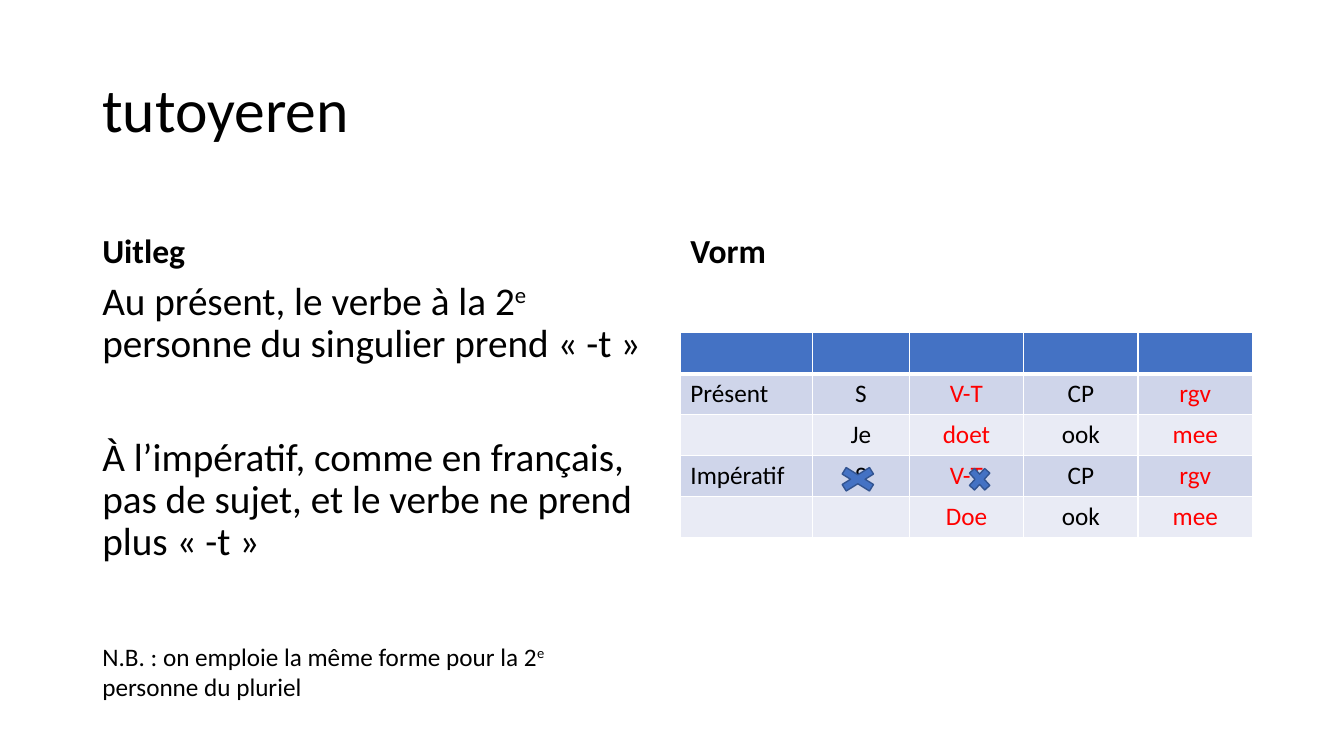
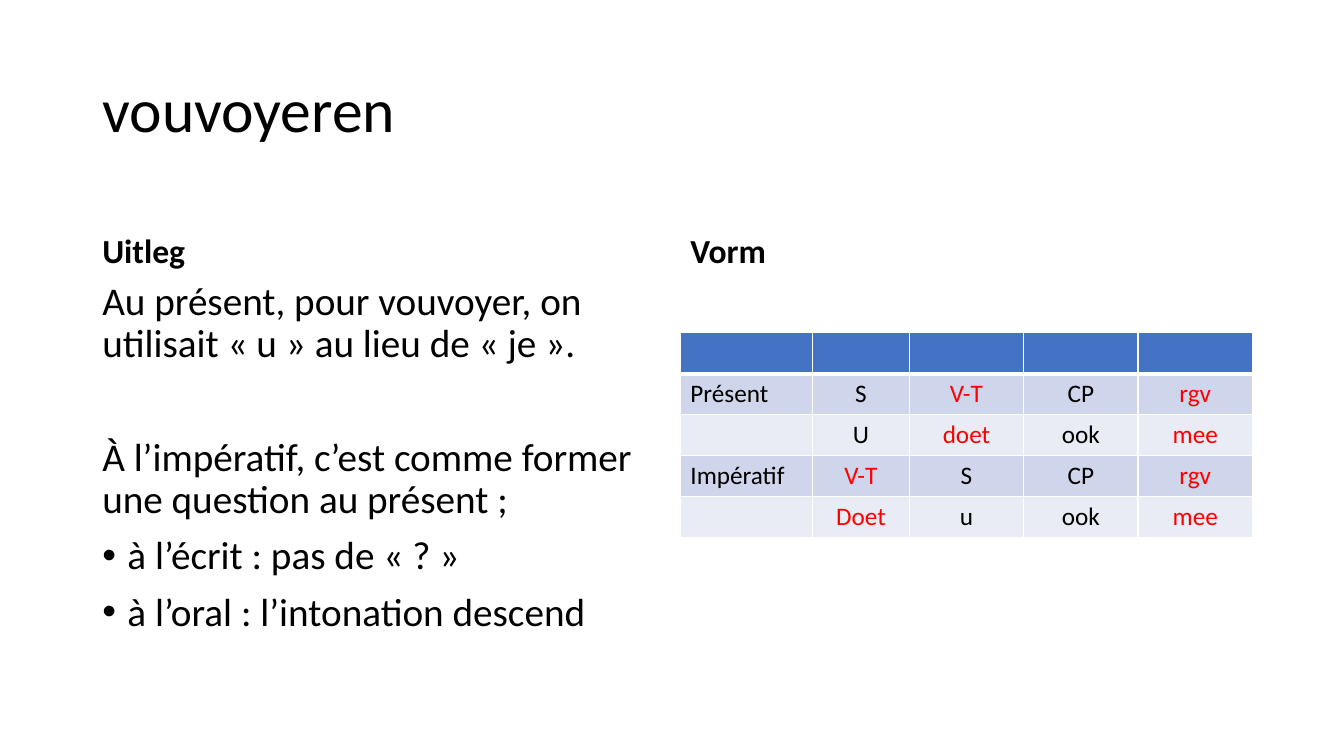
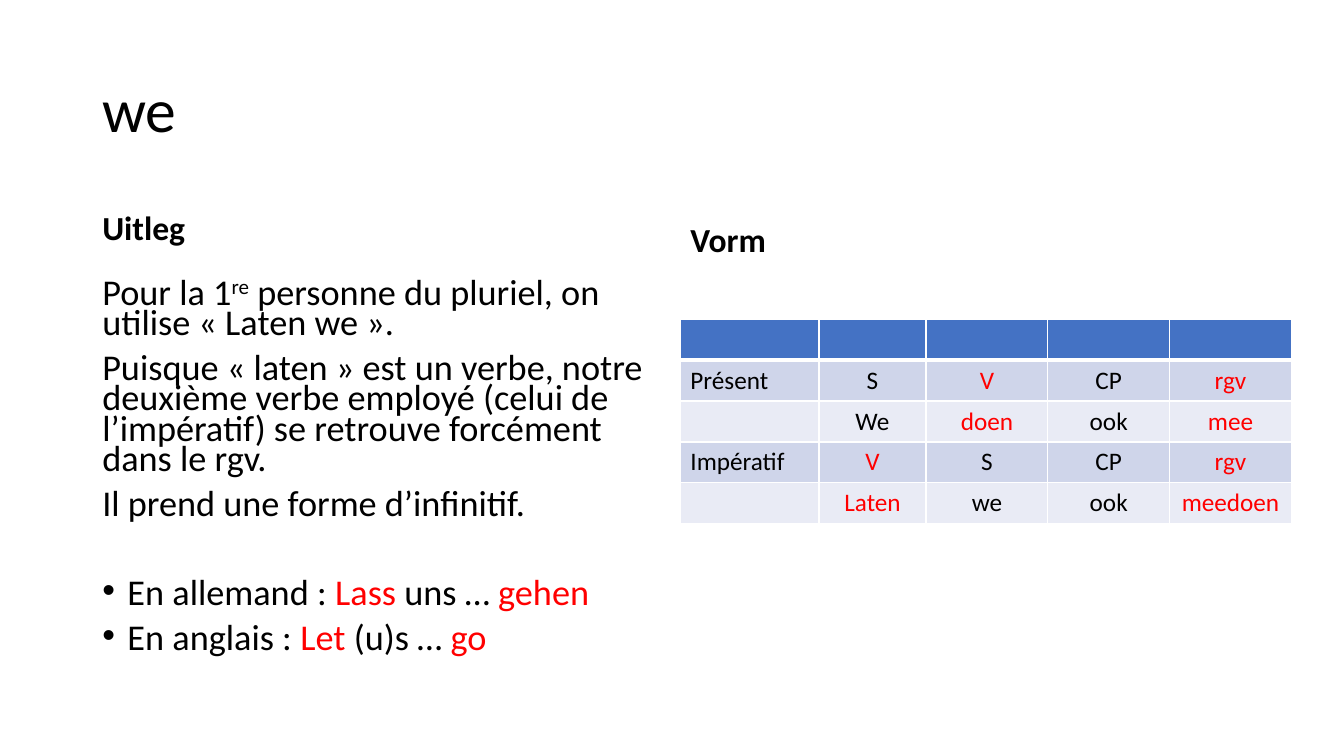
from lxml.etree import SubElement
from pptx import Presentation
from pptx.dml.color import RGBColor
from pptx.enum.shapes import MSO_SHAPE
from pptx.enum.text import MSO_ANCHOR, PP_ALIGN
from pptx.oxml import parse_xml
from pptx.oxml.ns import nsdecls, qn
from pptx.util import Emu, Pt

PX = 9525
FONT = "Calibri"
BLACK = RGBColor(0x00, 0x00, 0x00)
RED = RGBColor(0xFF, 0x00, 0x00)
WHITE = RGBColor(0xFF, 0xFF, 0xFF)
BLUE = RGBColor(0x44, 0x72, 0xC4)
DARK_BLUE = RGBColor(0x32, 0x54, 0x91)
BAND_DARK = RGBColor(0xCF, 0xD5, 0xEA)
BAND_LIGHT = RGBColor(0xE9, 0xEB, 0xF5)

LEFT, RIGHT = 88, 648
TEXT_WIDTH, FORM_WIDTH = 541, 544
HEADING_HEIGHT = 86
ROW_HEIGHT = 39
LABEL_COLUMN = 0
PRESENT_VERB, LAST_COLUMN = 2, 4

TITLE = {"size": Pt(44)}
HEADING = {"size": Pt(24), "bold": True}
BODY = {"size": Pt(28)}
TIGHT_BODY = {"size": Pt(25.9)}
SMALL = {"size": Pt(18)}
TIGHT = {"line_spacing": 0.7, "space_before": Pt(10)}
NORMAL = {"line_spacing": 0.9, "space_before": Pt(10)}


def px(*lengths):
    return [Emu(length * PX) for length in lengths]


def apply(target, values):
    for name, value in values.items():
        setattr(target, name, value)


def add_span(para, text, font, color=BLACK, raised=False):
    span = para.add_run()
    span.text = text
    apply(span.font, {"name": FONT, **font})
    span.font.color.rgb = color
    if raised:
        span.font._element.set("baseline", "30000")


def add_bullet(para):
    properties = para._p.get_or_add_pPr()
    apply_indent = {"marL": px(24)[0], "indent": px(-24)[0]}
    for name, value in apply_indent.items():
        properties.set(name, str(value))
    SubElement(properties, qn("a:buFont")).set("typeface", "Arial")
    SubElement(properties, qn("a:buChar")).set("char", "•")


def paragraph(*spans, bullet=False, **spacing):
    return {"spans": spans, "bullet": bullet, "spacing": spacing}


def red(text):
    return text, RED


def raised(text):
    return text, BLACK, True


def add_text(page, place, paragraphs, font, spacing, anchor=MSO_ANCHOR.TOP):
    frame = page.shapes.add_textbox(*px(*place)).text_frame
    apply(frame, {"word_wrap": True, "vertical_anchor": anchor})
    for index, content in enumerate(paragraphs):
        para = frame.add_paragraph() if index else frame.paragraphs[0]
        apply(para, {**spacing, **content["spacing"]})
        if content["bullet"]:
            add_bullet(para)
        for span in content["spans"]:
            parts = (span,) if isinstance(span, str) else span
            add_span(para, parts[0], font, *parts[1:])


def add_heading(page, text, left, top, width):
    place = (left, top, width, HEADING_HEIGHT)
    add_text(page, place, [paragraph(text)], HEADING, NORMAL, MSO_ANCHOR.BOTTOM)


def add_borders(cell, row):
    widths = {"L": 1, "R": 1, "T": 3 if row == 1 else 1, "B": 3 if row == 0 else 1}
    properties = cell._tc.get_or_add_tcPr()
    for index, (side, width) in enumerate(widths.items()):
        border = parse_xml(
            f'<a:ln{side} {nsdecls("a")} w="{Pt(width)}"><a:solidFill>'
            f'<a:srgbClr val="{WHITE}"/></a:solidFill></a:ln{side}>'
        )
        properties.insert(index, border)


def row_fill(row):
    if row == 0:
        return BLUE
    return BAND_DARK if row % 2 else BAND_LIGHT


def add_form_table(page, top, columns, words, imperative_verb):
    rows = [[""] * len(columns), *words]
    place = px(RIGHT, top, sum(columns), ROW_HEIGHT * len(rows))
    table = page.shapes.add_table(len(rows), len(columns), *place).table
    apply(table, {"first_row": False, "horz_banding": False})
    for column, width in zip(table.columns, px(*columns)):
        column.width = width
    for row, texts in enumerate(rows):
        verb = PRESENT_VERB if row < 3 else imperative_verb
        for column, text in enumerate(texts):
            cell = table.cell(row, column)
            cell.fill.solid()
            cell.fill.fore_color.rgb = row_fill(row)
            add_borders(cell, row)
            if text:
                para = cell.text_frame.paragraphs[0]
                if column != LABEL_COLUMN:
                    para.alignment = PP_ALIGN.CENTER
                color = RED if column in (verb, LAST_COLUMN) else BLACK
                add_span(para, text, SMALL, color)


def add_cross(page, left, width):
    cross = page.shapes.add_shape(MSO_SHAPE.MATH_MULTIPLY, *px(left, 441, width, 31))
    cross.shadow.inherit = False
    cross.fill.solid()
    cross.fill.fore_color.rgb = BLUE
    cross.line.color.rgb = DARK_BLUE
    cross.line.width = Pt(1)


def add_lesson(deck, title, explanation, words, imperative_verb, font=BODY,
               spacing=NORMAL, tops=(177, 177, 317), columns=(126, 92, 109, 109, 109)):
    page = deck.slides.add_slide(deck.slide_layouts[6])
    left_top, right_top, table_top = tops
    add_text(page, (LEFT, 38, 1104, 139), [paragraph(title)], TITLE,
             {"line_spacing": 0.9}, MSO_ANCHOR.MIDDLE)
    add_heading(page, "Uitleg", LEFT, left_top, TEXT_WIDTH)
    add_text(page, (LEFT, 263, TEXT_WIDTH, 387), explanation, font, spacing)
    add_heading(page, "Vorm", RIGHT, right_top, FORM_WIDTH)
    add_form_table(page, table_top, columns, words, imperative_verb)
    return page


def add_tutoyeren(deck):
    explanation = [
        paragraph("Au présent, le verbe à la 2", raised("e"),
                  " personne du singulier prend « -t »"),
        paragraph("À l’impératif, comme en français, pas de sujet, "
                  "et le verbe ne prend plus « -t »", space_before=Pt(51)),
    ]
    words = [
        ["Présent", "S", "V-T", "CP", "rgv"],
        ["", "Je", "doet", "ook", "mee"],
        ["Impératif", "S", "V-T", "CP", "rgv"],
        ["", "", "Doe", "ook", "mee"],
    ]
    page = add_lesson(deck, "tutoyeren", explanation, words, 2)
    for left, width in ((792, 50), (919, 28)):
        add_cross(page, left, width)
    note = paragraph("N.B. : on emploie la même forme pour la 2", raised("e"),
                     " personne du pluriel")
    add_text(page, (LEFT, 606, 495, 68), [note], SMALL, {})


def add_vouvoyeren(deck):
    explanation = [
        paragraph("Au présent, pour vouvoyer, on utilisait « u » au lieu de « je »."),
        paragraph("À l’impératif, c’est comme former une question au présent ;",
                  space_before=Pt(51)),
        paragraph("à l’écrit : pas de « ? »", bullet=True),
        paragraph("à l’oral : l’intonation descend", bullet=True),
    ]
    words = [
        ["Présent", "S", "V-T", "CP", "rgv"],
        ["", "U", "doet", "ook", "mee"],
        ["Impératif", "V-T", "S", "CP", "rgv"],
        ["", "Doet", "u", "ook", "mee"],
    ]
    add_lesson(deck, "vouvoyeren", explanation, words, 1)


def add_we(deck):
    explanation = [
        paragraph("Pour la 1", raised("re"),
                  " personne du pluriel, on utilise « Laten we »."),
        paragraph("Puisque « laten » est un verbe, notre deuxième verbe employé "
                  "(celui de l’impératif) se retrouve forcément dans le rgv."),
        paragraph("Il prend une forme d’infinitif."),
        paragraph("En allemand : ", red("Lass"), " uns … ", red("gehen"),
                  bullet=True, space_before=Pt(42)),
        paragraph("En anglais : ", red("Let "), "(u)s … ", red("go"), bullet=True),
    ]
    words = [
        ["Présent", "S", "V", "CP", "rgv"],
        ["", "We", "doen", "ook", "mee"],
        ["Impératif", "V", "S", "CP", "rgv"],
        ["", "Laten", "we", "ook", "meedoen"],
    ]
    add_lesson(deck, "we", explanation, words, 1, TIGHT_BODY, TIGHT,
               (155, 166, 304), (132, 102, 116, 116, 116))


def main():
    deck = Presentation()
    deck.slide_width, deck.slide_height = px(1280, 720)
    add_tutoyeren(deck)
    add_vouvoyeren(deck)
    add_we(deck)
    deck.save("out.pptx")


if __name__ == "__main__":
    main()
